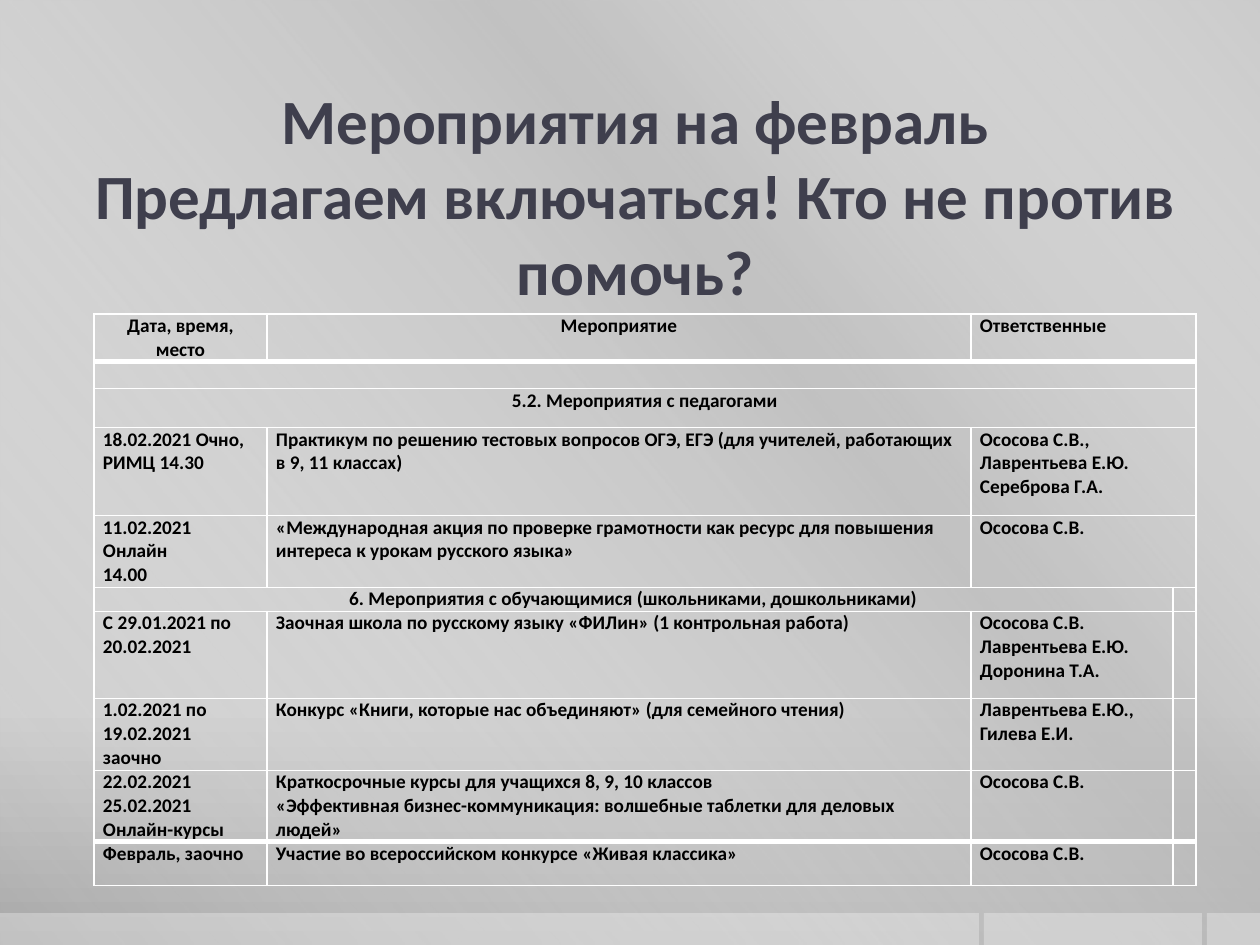
from dataclasses import dataclass
from typing import NamedTuple

from lxml import etree
from pptx import Presentation
from pptx import util as u
from pptx.dml.color import RGBColor
from pptx.enum import shapes, text
from pptx.oxml.ns import qn

SCALE = 914400 / 126


@dataclass(frozen=True)
class Theme:
    font: str = "Calibri"
    title_size: int = 36
    cell_size: int = 11
    title: str = "3F3F4D"
    ink: str = "000000"
    white: str = "FFFFFF"
    thin: int = 1
    thick: int = 3


class Box(NamedTuple):
    left: int
    top: int
    width: int
    height: int


class Stop(NamedTuple):
    position: int
    color: str
    alpha: int = 100


class Row(NamedTuple):
    height: int
    cells: tuple[str, ...]
    spans: tuple[int, ...] = (1, 1, 1, 1)
    centered: int = 0  # number of leading cells with centred text


THEME = Theme()
LEFT, CENTER = text.PP_ALIGN.LEFT, text.PP_ALIGN.CENTER
TITLE = "Мероприятия на февраль\vПредлагаем включаться! Кто не против помочь?"
TITLE_BOX = Box(74, 65, 1123, 259)
BACKGROUND = (Stop(0, "CBCBCB"), Stop(76, "C8C8C8"), Stop(100, "A7A7A7"))
SHEEN = (Stop(0, "FFFFFF", 0), Stop(34, "BFBFBF", 61),
         Stop(38, "BFBFBF", 76), Stop(100, "FFFFFF", 0))
FOOTER_BARS = (Box(1207, 913, 53, 32), Box(984, 913, 218, 32), Box(0, 913, 979, 32))
TABLE_ORIGIN = (94, 314)
COLUMNS = (173, 704, 202, 22)
WIDE_LAST = (1, 1, 2)
ROWS = (
    Row(47, ("Дата, время, место", "Мероприятие", "Ответственные"), WIDE_LAST, 2),
    Row(27, ("",), (4,)),
    Row(39, ("5.2. Мероприятия с педагогами",), (4,), 1),
    Row(88, ("18.02.2021 Очно, РИМЦ 14.30",
             "Практикум по решению тестовых вопросов ОГЭ, ЕГЭ "
             "(для учителей, работающих в 9, 11 классах)",
             "Ососова С.В., Лаврентьева Е.Ю.\nСереброва Г.А."), WIDE_LAST),
    Row(72, ("11.02.2021\nОнлайн\n14.00",
             "«Международная акция по проверке грамотности как ресурс "
             "для повышения интереса к урокам русского языка»",
             "Ососова С.В."), WIDE_LAST),
    Row(24, ("6. Мероприятия с обучающимися (школьниками, дошкольниками)", ""), (3, 1), 1),
    Row(87, ("С 29.01.2021 по 20.02.2021",
             "Заочная школа по русскому языку «ФИЛин» (1 контрольная работа)",
             "Ососова С.В.\nЛаврентьева Е.Ю.\nДоронина Т.А.", "")),
    Row(72, ("1.02.2021 по 19.02.2021\nзаочно",
             "Конкурс «Книги, которые нас объединяют» (для семейного чтения)",
             "Лаврентьева Е.Ю., Гилева Е.И.", "")),
    Row(71, ("22.02.2021\n25.02.2021\nОнлайн-курсы",
             "Краткосрочные курсы для учащихся 8, 9, 10 классов\n"
             "«Эффективная бизнес-коммуникация: волшебные таблетки для деловых людей»",
             "Ососова С.В.", "")),
    Row(44, ("Февраль, заочно", "Участие во всероссийском конкурсе «Живая классика»",
             "Ососова С.В.", "")),
)
THICK_RULES = (1, len(ROWS) - 1)  # row edges drawn with a heavy line


def px(length: int) -> u.Emu:
    return u.Emu(round(length * SCALE))


def add_color(parent, color: str, alpha: int = 100) -> None:
    node = etree.SubElement(parent, qn("a:srgbClr"), val=color)
    if alpha < 100:
        etree.SubElement(node, qn("a:alpha"), val=str(alpha * 1000))


def set_gradient(fill, owner, stops: tuple[Stop, ...], angle: int) -> None:
    """Give the fill its stops; owner is the element that holds it."""
    fill.gradient()
    gradient = next(owner.iter(qn("a:gradFill")))
    stop_list = gradient.find(qn("a:gsLst"))
    for old in list(stop_list):
        stop_list.remove(old)
    for stop in stops:
        node = etree.SubElement(stop_list, qn("a:gs"), pos=str(stop.position * 1000))
        add_color(node, stop.color, stop.alpha)
    gradient.find(qn("a:lin")).set("ang", str(angle * 60000))


def add_rectangle(page, box: Box):
    shape = page.shapes.add_shape(shapes.MSO_SHAPE.RECTANGLE, *map(px, box))
    shape.shadow.inherit = False
    shape.line.fill.background()
    return shape


def add_backdrop(page) -> None:
    set_gradient(page.background.fill, page._element, BACKGROUND, 90)
    sheen = add_rectangle(page, Box(0, 0, 1260, 945))
    set_gradient(sheen.fill, sheen._element, SHEEN, 140)
    for box in FOOTER_BARS:
        bar = add_rectangle(page, box)
        bar.fill.solid()
        bar.fill.fore_color.rgb = RGBColor.from_string(THEME.white)
        color = next(bar._element.spPr.iter(qn("a:srgbClr")))
        etree.SubElement(color, qn("a:alpha"), val="30000")


def style_paragraph(para, size: int, color: str, alignment) -> None:
    para.alignment = alignment
    para.font.name = THEME.font
    para.font.size = u.Pt(size)
    para.font.bold = True
    para.font.color.rgb = RGBColor.from_string(color)


def place_title(page) -> None:
    title = page.shapes.title
    page.shapes._spTree.append(title._element)  # in front of the backdrop
    title.left, title.top, title.width, title.height = map(px, TITLE_BOX)
    frame = title.text_frame
    frame.text = TITLE
    frame.word_wrap = True
    frame.auto_size = text.MSO_AUTO_SIZE.NONE
    frame.vertical_anchor = text.MSO_ANCHOR.MIDDLE
    frame.margin_left = frame.margin_right = 0
    frame.margin_top = frame.margin_bottom = px(6)
    style_paragraph(frame.paragraphs[0], THEME.title_size, THEME.title, CENTER)


def format_cell(cell, row_index: int) -> None:
    """Clear the fill and margins and draw the four borders."""
    cell.fill.background()
    cell.margin_top = cell.margin_bottom = 0
    cell.margin_left = cell.margin_right = px(9)
    edges = {"lnL": None, "lnR": None, "lnT": row_index, "lnB": row_index + 1}
    properties = cell._tc.get_or_add_tcPr()
    for order, (side, edge) in enumerate(edges.items()):
        width = THEME.thick if edge in THICK_RULES else THEME.thin
        line = etree.Element(qn(f"a:{side}"), w=str(u.Pt(width)))
        add_color(etree.SubElement(line, qn("a:solidFill")), THEME.white)
        properties.insert(order, line)


def add_schedule(page) -> None:
    frame = page.shapes.add_table(
        len(ROWS), len(COLUMNS), *map(px, TABLE_ORIGIN),
        px(sum(COLUMNS)), px(sum(row.height for row in ROWS)))
    table = frame.table
    table.first_row = table.horz_banding = False
    for column, width in zip(table.columns, COLUMNS):
        column.width = px(width)
    for index, row in enumerate(ROWS):
        table.rows[index].height = px(row.height)
        for column in range(len(COLUMNS)):
            format_cell(table.cell(index, column), index)
        column = 0
        for position, (words, span) in enumerate(zip(row.cells, row.spans)):
            cell = table.cell(index, column)
            if span > 1:
                cell.merge(table.cell(index, column + span - 1))
            cell.text = words
            if column == len(COLUMNS) - 1:
                cell.margin_left = cell.margin_right = 0
            alignment = CENTER if position < row.centered else LEFT
            for para in cell.text_frame.paragraphs:
                style_paragraph(para, THEME.cell_size, THEME.ink, alignment)
            column += span


def main() -> None:
    deck = Presentation()
    deck.slide_width, deck.slide_height = px(1260), px(945)
    page = deck.slides.add_slide(deck.slide_layouts[5])
    add_backdrop(page)
    place_title(page)
    add_schedule(page)
    deck.save("out.pptx")


if __name__ == "__main__":
    main()
